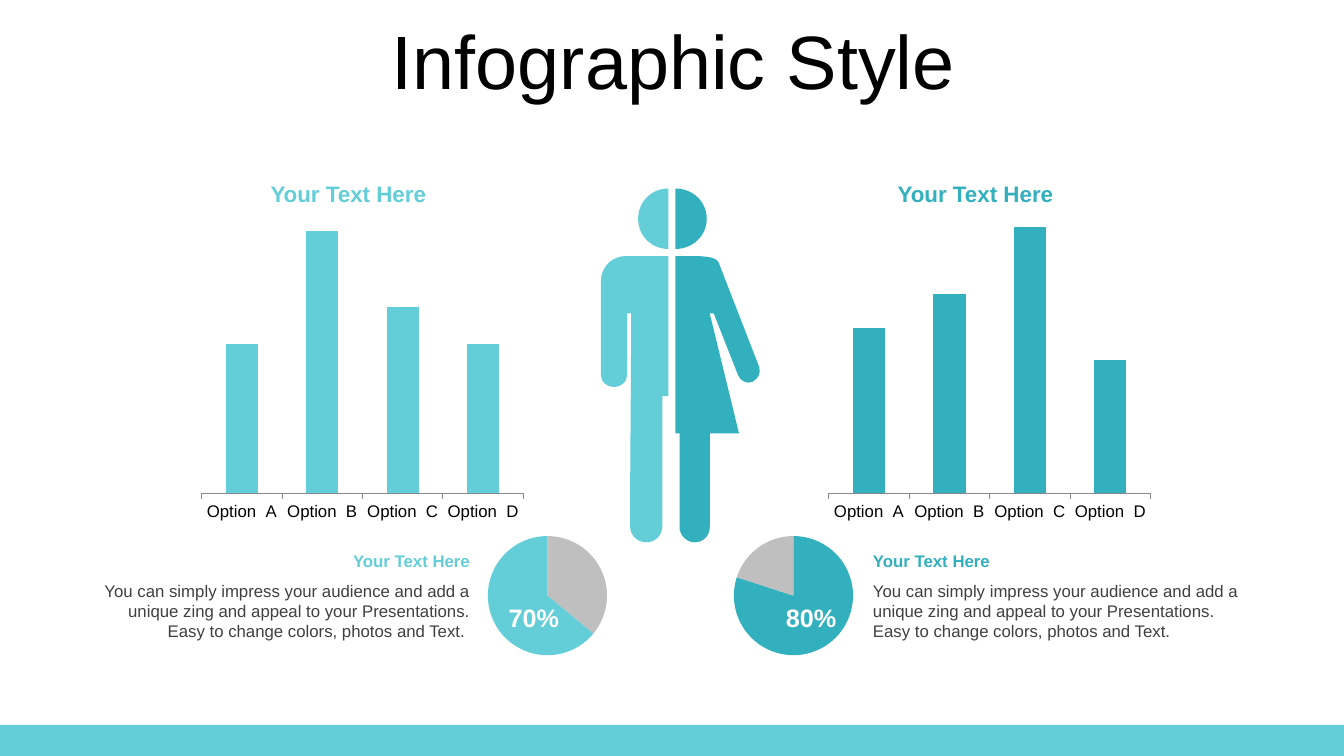
from lxml import etree
from pptx import Presentation
from pptx import util as u
from pptx.chart.data import CategoryChartData
from pptx.dml.color import RGBColor
from pptx.enum import chart as ch, shapes, text
from pptx.oxml.ns import qn

LIGHT, DARK, GREY, BODY = "64CED8", "32B0BE", "BFBFBF", "404040"
HEADING = "Your Text Here"
BLURB = ("You can simply impress your audience and add a unique zing and appeal "
         "to your Presentations. Easy to change colors, photos and Text.")
LEFT, CENTER, RIGHT = text.PP_ALIGN.LEFT, text.PP_ALIGN.CENTER, text.PP_ALIGN.RIGHT

# Contours in inches from the half figure's corner: pairs are corners, sixes are Bezier curves.
MAN = [
    [(.25, .67), (.67, .67), (.67, 2.06), (.61, 2.06), (.61, 3.35),
     (.61, 3.44, .54, 3.51, .45, 3.51), (.36, 3.51, .29, 3.44, .29, 3.35),
     (.29, 2.65, .3, 1.94, .3, 1.24), (.26, 1.24), (.26, 1.85),
     (.26, 1.92, .2, 1.97, .13, 1.97), (.06, 1.97, 0, 1.92, 0, 1.85),
     (0, .92), (0, .78, .11, .67, .25, .67)],
    [(.67, 0), (.67, .6), (.5, .6, .37, .47, .37, .3), (.37, .13, .5, 0, .67, 0)],
]
WOMAN = [
    [(.12, .67), (.26, .67, .41, .67, .43, .74), (.83, 1.77),
     (.85, 1.83, .82, 1.89, .76, 1.92), (.71, 1.94, .64, 1.91, .62, 1.85),
     (.38, 1.24), (.34, 1.24), (.63, 2.43), (.34, 2.43), (.34, 3.36),
     (.34, 3.44, .28, 3.51, .19, 3.51), (.11, 3.51, .04, 3.44, .04, 3.36),
     (.04, 2.43), (0, 2.43), (0, .67)],
    [(0, 0), (.17, 0, .31, .13, .31, .3), (.31, .47, .17, .6, 0, .6)],
]


def rgb(code):
    return RGBColor.from_string(code)


def paint(shape, color):
    shape.shadow.inherit = False
    shape.fill.solid()
    shape.fill.fore_color.rgb = rgb(color)
    shape.line.fill.background()


def write(para, words, size, color, align, bold=False):
    para.alignment = align
    span = para.add_run()
    span.text = words
    span.font.name, span.font.size, span.font.bold = "Arial", u.Pt(size), bold
    span.font.color.rgb = rgb(color)


def add_label(page, box, words, size, color, align, bold=False):
    frame = page.shapes.add_textbox(*map(u.Inches, box)).text_frame
    frame.word_wrap = True
    write(frame.paragraphs[0], words, size, color, align, bold)


def add_title(page, box, words):
    title = page.shapes.title
    title.left, title.top, title.width, title.height = map(u.Inches, box)
    frame = title.text_frame
    frame.vertical_anchor = text.MSO_ANCHOR.MIDDLE
    frame.auto_size = text.MSO_AUTO_SIZE.NONE
    para = frame.paragraphs[0]
    para.line_spacing, para.space_before = 0.9, u.Pt(10)
    write(para, words, 54, "000000", CENTER)


def add_footer_band(page, box):
    paint(page.shapes.add_shape(shapes.MSO_SHAPE.RECTANGLE, *map(u.Inches, box)), LIGHT)


def add_half_figure(page, left, top, contours, color):
    """Draw the corners with straight sides, then bend the sides that are curves."""
    outlines = [[((left + part[-2]) * 1000, (top + part[-1]) * 1000) for part in contour]
                for contour in contours]
    builder = page.shapes.build_freeform(*outlines[0][0], scale=914.4)
    builder.add_line_segments(outlines[0][1:])
    for outline in outlines[1:]:
        builder.move_to(*outline[0])
        builder.add_line_segments(outline[1:])
    figure = builder.convert_to_shape()
    sides = list(figure._element.iter(qn("a:lnTo")))
    parts = [part for contour in contours for part in contour[1:]]
    for side, part in zip(sides, parts):
        if len(part) == 6:
            curve = etree.Element(qn("a:cubicBezTo"))
            for x, y in zip(part[::2], part[1::2]):
                etree.SubElement(curve, qn("a:pt"), x=str(round(x * 1000)), y=str(round(y * 1000)))
            side.getparent().replace(side, curve)
    paint(figure, color)


def set_plot_box(chart, x, y, w, h):
    """Fix the inner plot area as fractions of the chart."""
    area = chart.plots[0]._element.getparent()
    for old in area.findall(qn("c:layout")):
        area.remove(old)
    layout = etree.Element(qn("c:layout"))
    area.insert(0, layout)
    manual = etree.SubElement(layout, qn("c:manualLayout"))
    settings = {"layoutTarget": "inner", "xMode": "edge", "yMode": "edge",
                "x": x, "y": y, "w": w, "h": h}
    for name, value in settings.items():
        etree.SubElement(manual, qn("c:" + name)).set("val", str(value))


def add_plain_chart(page, box, kind, categories, values):
    data = CategoryChartData()
    data.categories = categories
    data.add_series("Series 1", values)
    chart = page.shapes.add_chart(kind, *map(u.Inches, box), data).chart
    chart.has_legend = chart.has_title = False
    chart.font.name, chart.font.size = "Arial", u.Pt(18)
    chart.font.color.rgb = rgb("000000")
    return chart


def add_columns(page, box, values, top_value, color):
    left, top, _, _ = box
    chart = add_plain_chart(page, box, ch.XL_CHART_TYPE.COLUMN_STACKED,
                            [f"Option  {letter}" for letter in "ABCD"], values)
    set_plot_box(chart, 0.097, 0.034, 0.884, 0.886)
    plot = chart.plots[0]
    plot.gap_width, plot.overlap, plot.vary_by_categories = 150, 100, False
    fill = plot.series[0].format.fill
    fill.solid()
    fill.fore_color.rgb = rgb(color)
    scale = chart.value_axis
    scale.visible = scale.has_major_gridlines = False
    scale.minimum_scale, scale.maximum_scale = 0, top_value
    axis = chart.category_axis
    axis.major_tick_mark = ch.XL_TICK_MARK.OUTSIDE
    axis.tick_labels.font.size, axis.tick_labels.font.name = u.Pt(12), "Arial"
    axis.format.line.color.rgb = rgb("898989")
    axis.format.line.width = u.Pt(0.75)
    add_label(page, (left + 0.79, top - 0.06, 2.03, 0.37), HEADING, 16, color, CENTER, True)


def add_pie(page, box, values, colors, percent, label_left):
    left, top, _, _ = box
    chart = add_plain_chart(page, box, ch.XL_CHART_TYPE.PIE, ["1", "2"], values)
    set_plot_box(chart, 0.095, 0.095, 0.81, 0.81)
    chart.plots[0].vary_by_categories = False
    for index, color in enumerate(colors):
        part = chart.plots[0].series[0].points[index].format
        part.fill.solid()
        part.fill.fore_color.rgb = rgb(color)
        part.line.fill.background()
    add_label(page, (left + label_left, top + 0.75, 0.79, 0.4),
              percent, 18, "FFFFFF", CENTER, True)


def add_blurb(page, box, words, color, align):
    left, top, width, height = box
    add_label(page, (left, top, width, 0.3), HEADING, 12, color, align, True)
    add_label(page, (left, top + 0.3, width, height - 0.3), words, 12, BODY, align)


def main():
    deck = Presentation()
    deck.slide_width, deck.slide_height = u.Inches(13.33), u.Inches(7.5)
    page = deck.slides.add_slide(deck.slide_layouts[5])
    add_footer_band(page, (0, 7.19, 13.33, 0.31))
    add_title(page, (0.35, 0.25, 12.66, 0.79), "Infographic Style")
    add_columns(page, (1.65, 1.8, 3.61, 3.37), (57, 100, 71, 57), 114.5, LIGHT)
    add_columns(page, (7.87, 1.8, 3.61, 3.37), (62, 75, 100, 50), 113, DARK)
    add_half_figure(page, 5.96, 1.87, MAN, LIGHT)
    add_half_figure(page, 6.7, 1.87, WOMAN, DARK)
    add_pie(page, (4.7, 5.18, 1.46, 1.46), (36, 64), (GREY, LIGHT), "70%", 0.2)
    add_pie(page, (7.14, 5.18, 1.46, 1.46), (80, 20), (DARK, GREY), "80%", 0.51)
    add_blurb(page, (0.82, 5.41, 3.94, 1.01), BLURB + " ", LIGHT, RIGHT)
    add_blurb(page, (8.56, 5.41, 3.91, 1.01), BLURB, DARK, LEFT)
    deck.save("out.pptx")


if __name__ == "__main__":
    main()
